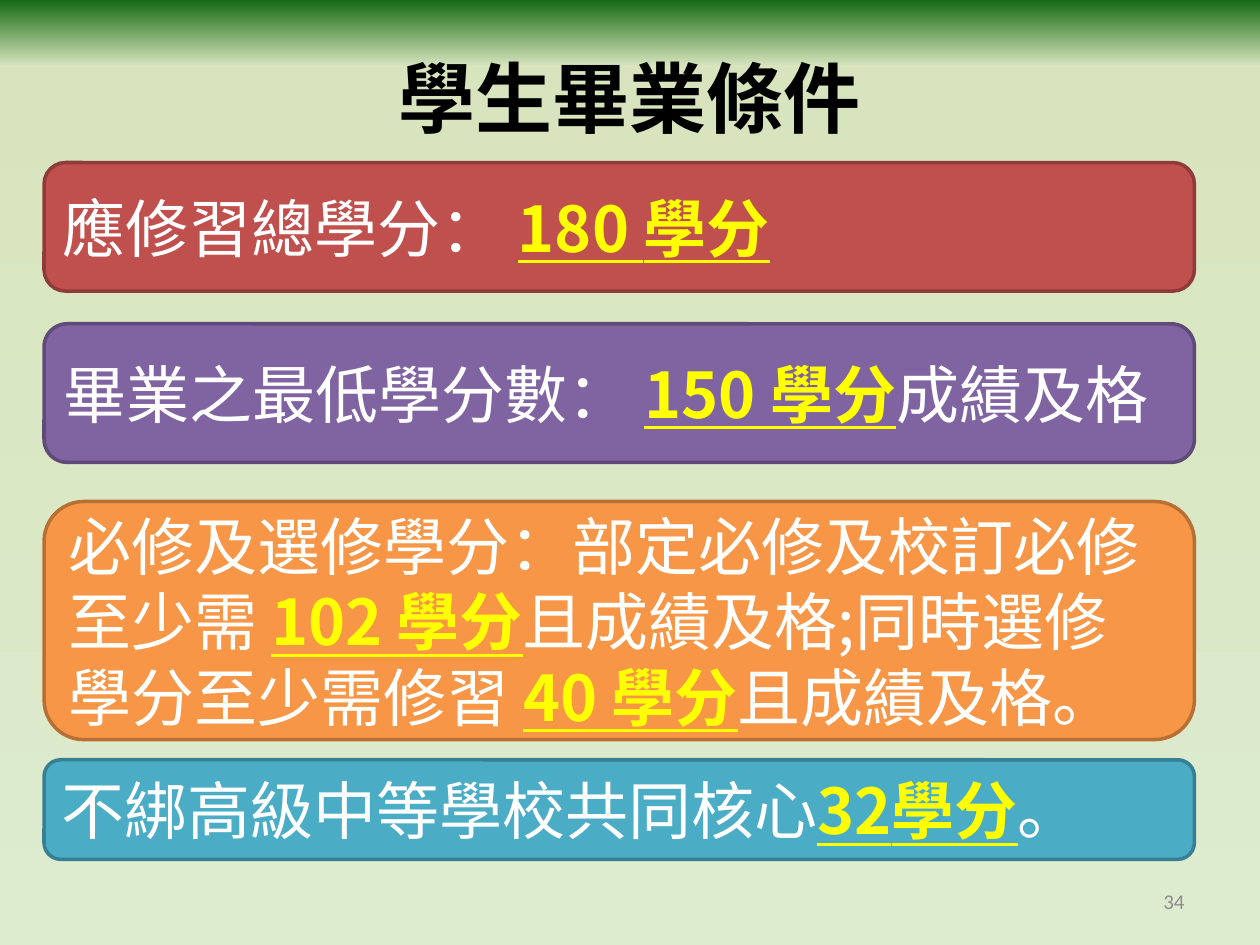
"""Build the slide on student graduation requirements."""
from copy import deepcopy

from pptx import Presentation
from pptx.dml.color import RGBColor
from pptx.enum.shapes import MSO_SHAPE
from pptx.enum.text import MSO_ANCHOR, PP_ALIGN
from pptx.oxml.ns import qn
from pptx.util import Inches, Pt

ROUNDED = MSO_SHAPE.ROUNDED_RECTANGLE
MIDDLE = MSO_ANCHOR.MIDDLE
LEFT, CENTER, RIGHT = PP_ALIGN.LEFT, PP_ALIGN.CENTER, PP_ALIGN.RIGHT

TITLE = "學生畢業條件"
PAGE_NUMBER = "34"
REQUIREMENTS = [
    {"top": 1.29, "height": 1.02, "colors": ("C0504D", "8E3B39"),
     "parts": [("應修習總學分： ", "body"), ("180 學分", "credit")]},
    {"top": 2.57, "height": 1.1, "colors": ("8064A2", "5F4A78"),
     "parts": [("畢業之最低學分數： ", "body"), ("150 學分", "credit"),
               ("成績及格", "body")]},
    {"top": 3.98, "height": 1.89, "colors": ("F79646", "B76F34"),
     "parts": [("必修及選修學分：部定必修及校訂必修至少需 ", "body"),
               ("102 學分", "credit"),
               ("且成績及格;同時選修學分至少需修習 ", "body"),
               ("40 學分", "credit"), ("且成績及格。", "body")]},
    {"top": 6.03, "height": 0.79, "colors": ("4BACC6", "377F92"),
     "parts": [("不綁高級中等學校共同核心", "body"), ("32學分", "credit"),
               ("。", "body")]},
]
CARD_LEFT, CARD_WIDTH = 0.35, 9.13

CJK = "Noto Sans CJK SC"
THEME = {
    "background": [(0, "DDEBCF"), (0.93, "D7E4BD"), (1, "156B13")],
    "title": {"name": CJK, "size": Pt(44), "bold": True, "color": "000000"},
    "body": {"name": CJK, "size": Pt(36), "bold": False, "color": "FFFFFF"},
    "credit": {"name": CJK, "size": Pt(36), "bold": True, "underline": True,
               "color": "FFFF00"},
    "page": {"name": "Calibri", "size": Pt(12), "color": "8C8C8C"},
    "outline": Pt(2),
}


def paint_background(slide):
    fill = slide.background.fill
    fill.gradient()
    fill.gradient_angle = 90
    stop_list = slide._element.find(".//" + qn("a:gsLst"))
    stop_list.append(deepcopy(stop_list[-1]))
    for stop, (position, color) in zip(fill.gradient_stops, THEME["background"]):
        stop.position = position
        stop.color.rgb = RGBColor.from_string(color)


def write(frame, parts, align):
    frame.word_wrap = True
    frame.vertical_anchor = MIDDLE
    paragraph = frame.paragraphs[0]
    paragraph.alignment = align
    for text, style in parts:
        run = paragraph.add_run()
        run.text = text
        for attribute, value in THEME[style].items():
            if attribute == "color":
                run.font.color.rgb = RGBColor.from_string(value)
            else:
                setattr(run.font, attribute, value)
        properties = run._r.get_or_add_rPr()
        east_asian = properties.makeelement(qn("a:ea"), {"typeface": run.font.name})
        properties.find(qn("a:latin")).addnext(east_asian)
    return paragraph


def add_label(slide, box, text, style, align):
    label = slide.shapes.add_textbox(*map(Inches, box))
    write(label.text_frame, [(text, style)], align)


def add_requirement(slide, requirement):
    box = (CARD_LEFT, requirement["top"], CARD_WIDTH, requirement["height"])
    card = slide.shapes.add_shape(ROUNDED, *map(Inches, box))
    card.shadow.inherit = False
    fill_color, line_color = map(RGBColor.from_string, requirement["colors"])
    card.fill.solid()
    card.fill.fore_color.rgb = fill_color
    card.line.color.rgb = line_color
    card.line.width = THEME["outline"]
    paragraph = write(card.text_frame, requirement["parts"], LEFT)
    paragraph.space_before = Pt(0)
    spacing = paragraph._p.pPr.find(qn("a:spcBef"))
    spacing.replace(spacing[0],
                    spacing.makeelement(qn("a:spcPct"), {"val": "20000"}))


def main():
    deck = Presentation()
    deck.slide_width, deck.slide_height = Inches(10), Inches(7.5)
    slide = deck.slides.add_slide(deck.slide_layouts[6])
    paint_background(slide)
    add_label(slide, (0.5, 0.3, 9, 0.93), TITLE, "title", CENTER)
    add_label(slide, (7.17, 6.95, 2.33, 0.4), PAGE_NUMBER, "page", RIGHT)
    for requirement in REQUIREMENTS:
        add_requirement(slide, requirement)
    deck.save("out.pptx")


if __name__ == "__main__":
    main()
